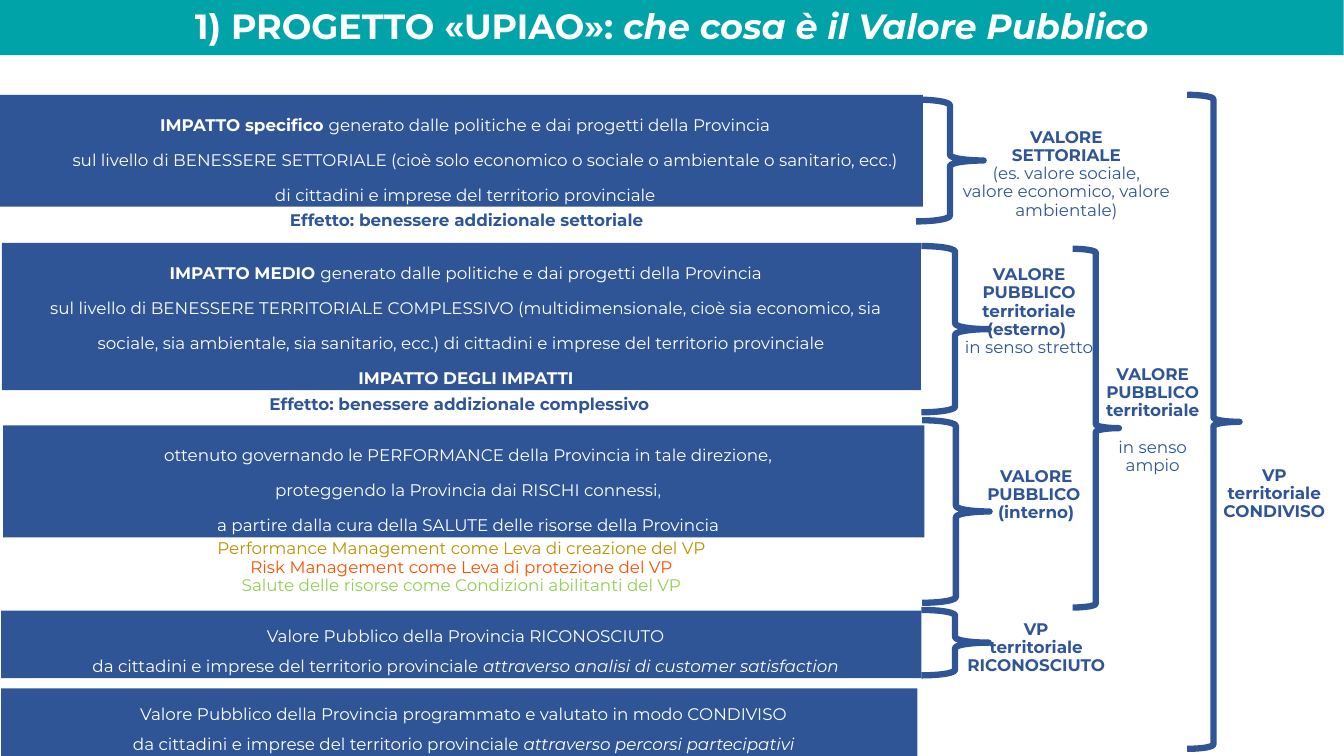
"""Build the slide on the meaning of public value for the UPIAO project."""
from pptx import Presentation
from pptx.dml.color import RGBColor
from pptx.enum.shapes import MSO_SHAPE
from pptx.enum.text import MSO_ANCHOR, PP_ALIGN
from pptx.util import Cm, Pt

RECTANGLE = MSO_SHAPE.RECTANGLE
BRACE = MSO_SHAPE.RIGHT_BRACE
TOP, MIDDLE = MSO_ANCHOR.TOP, MSO_ANCHOR.MIDDLE
CENTER = PP_ALIGN.CENTER

FONT = "Montserrat"
BLUE, TEAL, WHITE = "2F5597", "00A3A8", "FFFFFF"
GOLD, ORANGE, GREEN = "BF9000", "FE5000", "92D050"
FIRST_LINE, DEEP_FIRST_LINE = 0.23, 1.24
LABEL_INSETS, EFFECT_INSETS = (0.25, 0.13), (0.1, 0.13)

TITLE_BOX = (0, -0.08, 33.86, 1.47)
TITLE = [("1) PROGETTO «UPIAO»: ", "b"), ("che cosa è il Valore Pubblico", "bi")]

BANDS = [
    ((-0.03, 2.39, 23.29, 2.82), Pt(25), [
        [("IMPATTO specifico ", "b"),
         ("generato dalle politiche e dai progetti della Provincia", "")],
        [("sul livello di BENESSERE SETTORIALE (cioè solo economico o sociale "
          "o ambientale o sanitario, ecc.)", "")],
        [("di cittadini e imprese del territorio provinciale", "")]]),
    ((0.05, 6.12, 23.16, 3.71), Pt(25), [
        [("IMPATTO MEDIO ", "b"),
         ("generato dalle politiche e dai progetti della Provincia", "")],
        [("sul livello di BENESSERE TERRITORIALE COMPLESSIVO (multidimensionale, "
          "cioè sia economico, sia sociale, sia ambientale, sia sanitario, ecc.) "
          "di cittadini e imprese del territorio provinciale", "")],
        [("IMPATTO DEGLI IMPATTI", "b")]]),
    ((0.08, 10.72, 23.22, 2.82), Pt(25), [
        [("ottenuto governando le PERFORMANCE della Provincia in tale direzione,", "")],
        [("proteggendo la Provincia dai RISCHI connessi,", "")],
        [("a partire dalla cura della SALUTE delle risorse della Provincia", "")]]),
    ((0.03, 15.39, 23.19, 1.7), 1.5, [
        [("Valore Pubblico della Provincia RICONOSCIUTO", "")],
        [("da cittadini e imprese del territorio provinciale ", ""),
         ("attraverso analisi di customer satisfaction", "i")]]),
    ((0.03, 17.35, 23.09, 1.7), 1.5, [
        [("Valore Pubblico della Provincia programmato e valutato in modo CONDIVISO", "")],
        [("da cittadini e imprese del territorio provinciale ", ""),
         ("attraverso percorsi partecipativi", "i")]]),
]
DEEP_PARAGRAPH = (0, 1)

EFFECTS = [
    ((0.13, 5.21, 23.27, 0.71),
     [("Effetto: benessere addizionale settoriale", "b", BLUE)]),
    ((-0.03, 9.86, 23.22, 0.71),
     [("Effetto: benessere addizionale complessivo", "b", BLUE)]),
    ((0, 13.49, 23.27, 1.65), [
        ("Performance Management come Leva di creazione del VP", "", GOLD),
        ("Risk Management come Leva di protezione del VP", "", ORANGE),
        ("Salute delle risorse come Condizioni abilitanti del VP", "", GREEN)]),
]

LABELS = [
    ((23.98, 3.12, 5.79, 2.57), ["VALORE", "SETTORIALE"],
     ["(es. valore sociale,", "valore economico, valore ambientale)"], 0),
    ((23.98, 6.58, 3.91, 2.57),
     ["VALORE", "PUBBLICO", "territoriale", "(esterno) "], ["in senso stretto"], 0),
    ((24.16, 11.66, 3.91, 1.65), ["VALORE", "PUBBLICO ", "(interno)"], [], 0),
    ((27.46, 9.09, 3.18, 3.02), ["VALORE", "PUBBLICO", "territoriale"],
     ["in senso ampio"], 13),
    ((23.5, 15.52, 5.23, 1.65), ["VP", "territoriale", "RICONOSCIUTO"], [], 0),
    ((30.35, 11.63, 3.53, 1.65), ["VP", "territoriale", "CONDIVISO"], [], 0),
]

BRACES = [
    (23.09, 2.51, 1.7, 3.07),
    (23.22, 6.2, 1.7, 4.19),
    (23.24, 10.59, 1.7, 4.6),
    (27.03, 6.27, 1.17, 9.04),
    (23.22, 15.37, 1.7, 1.65),
    (29.92, 2.39, 1.32, 16.48),
]


def color(value):
    return RGBColor.from_string(value)


def add_paragraph(frame, index, runs, size, ink, spacing):
    paragraph = frame.paragraphs[0] if index == 0 else frame.add_paragraph()
    paragraph.alignment = CENTER
    paragraph.line_spacing = spacing
    for text, style in runs:
        run = paragraph.add_run()
        run.text = text
        run.font.name = FONT
        run.font.size = Pt(size)
        run.font.bold = "b" in style
        run.font.italic = "i" in style
        run.font.color.rgb = color(ink)
    return paragraph


def add_block(slide, box, fill, anchor):
    shape = slide.shapes.add_shape(RECTANGLE, *map(Cm, box))
    shape.shadow.inherit = False
    shape.fill.solid()
    shape.fill.fore_color.rgb = color(fill)
    shape.line.fill.background()
    shape.text_frame.word_wrap = True
    shape.text_frame.vertical_anchor = anchor
    return shape.text_frame


def add_text(slide, box, lines, insets):
    frame = slide.shapes.add_textbox(*map(Cm, box)).text_frame
    frame.word_wrap = True
    frame.margin_left = frame.margin_right = Cm(insets[0])
    frame.margin_top = frame.margin_bottom = Cm(insets[1])
    for index, (text, style, ink) in enumerate(lines):
        add_paragraph(frame, index, [(text, style)], 12, ink, 0.9)
    return frame


def add_brace(slide, box):
    shape = slide.shapes.add_shape(BRACE, *map(Cm, box))
    shape.shadow.inherit = False
    shape.fill.background()
    shape.line.color.rgb = color(BLUE)
    shape.line.width = Pt(4.5)


def main():
    presentation = Presentation()
    presentation.slide_width, presentation.slide_height = Cm(33.87), Cm(19.05)
    slide = presentation.slides.add_slide(presentation.slide_layouts[6])

    for band, (box, spacing, paragraphs) in enumerate(BANDS):
        frame = add_block(slide, box, BLUE, TOP)
        for index, runs in enumerate(paragraphs):
            paragraph = add_paragraph(frame, index, runs, 12, WHITE, spacing)
            indent = DEEP_FIRST_LINE if (band, index) == DEEP_PARAGRAPH else FIRST_LINE
            properties = paragraph._p.get_or_add_pPr()
            properties.set("marL", "0")
            properties.set("indent", str(Cm(indent)))

    for box, lines in EFFECTS:
        add_text(slide, box, lines, EFFECT_INSETS)

    for box, heading, details, gap in LABELS:
        lines = [(text, "b", BLUE) for text in heading]
        lines += [(text, "", BLUE) for text in details]
        frame = add_text(slide, box, lines, LABEL_INSETS)
        if gap:
            frame.paragraphs[len(heading)].space_before = Pt(gap)

    for box in BRACES:
        add_brace(slide, box)

    title_frame = add_block(slide, TITLE_BOX, TEAL, MIDDLE)
    add_paragraph(title_frame, 0, TITLE, 25, WHITE, 1.0)
    presentation.save("out.pptx")


if __name__ == "__main__":
    main()
